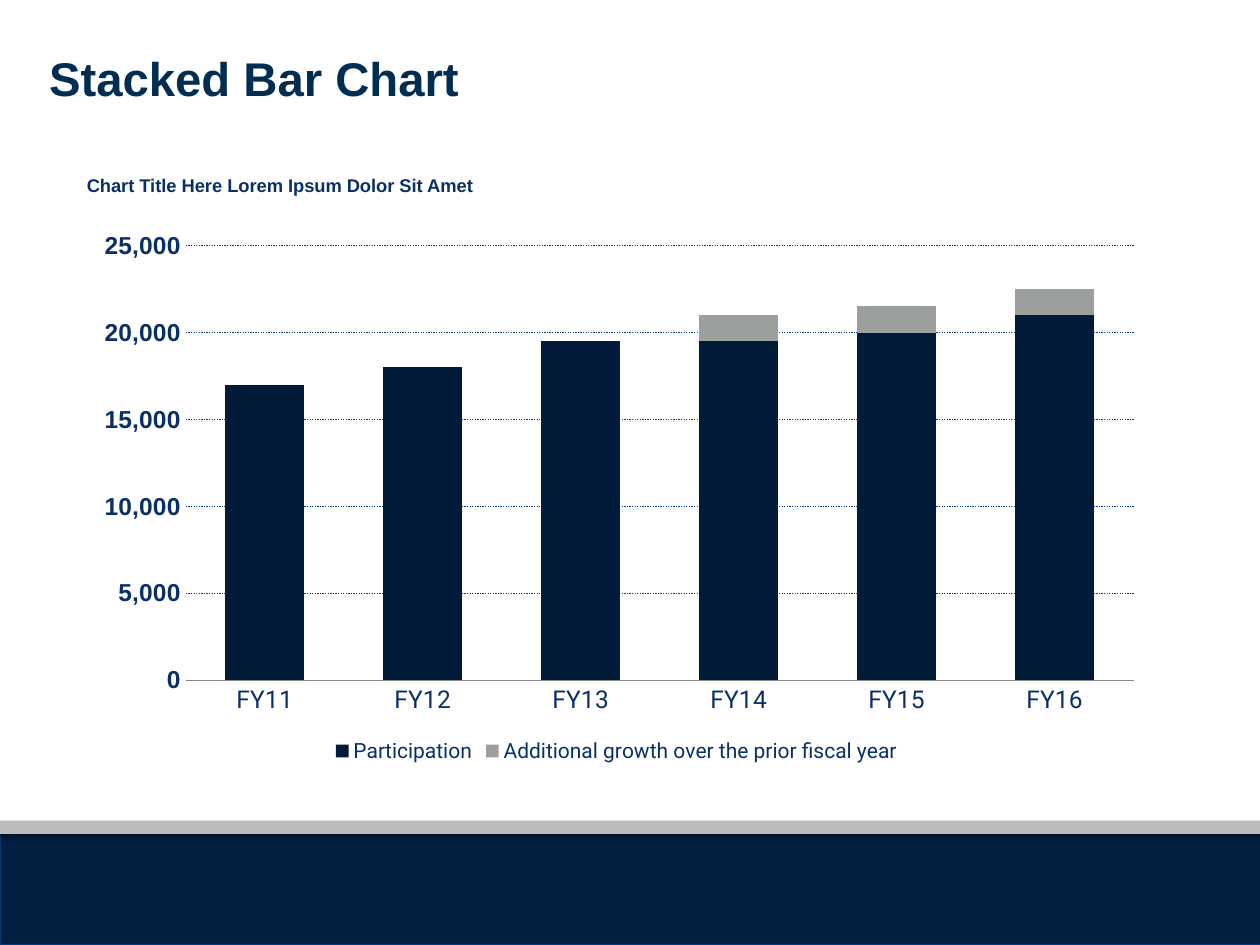
from lxml import etree
from pptx import Presentation
from pptx.chart.data import CategoryChartData
from pptx.dml.color import RGBColor
from pptx.enum import chart as ch, dml, shapes, text
from pptx.oxml import parse_xml
from pptx.oxml.ns import nsdecls, qn
from pptx.util import Pt

NAVY = RGBColor(0x04, 0x1E, 0x42)
EDGE = RGBColor(0x00, 0x3A, 0x79)
SILVER = RGBColor(0xBB, 0xBC, 0xBC)
HEAD = RGBColor(0x00, 0x2D, 0x50)
INK = RGBColor(0x0B, 0x30, 0x66)
GRID = RGBColor(0x00, 0x3D, 0x81)
AXIS = RGBColor(0x86, 0x86, 0x86)
BASE = RGBColor(0x01, 0x1B, 0x39)
EXTRA = RGBColor(0x9C, 0xA0, 0x9C)

YEARS = [f"FY{n}" for n in range(11, 17)]
SERIES = [
    ("Participation", [17000, 18000, 19500, 19500, 20000, 21000], BASE),
    ("Additional growth over the prior fiscal year", [None] * 3 + [1500] * 3, EXTRA),
]
PLOT = {"x": 0.1, "y": 0.05, "w": 0.88, "h": 0.79}


def style(font, size, color, name="Arial", bold=False):
    """Set the face, size, weight and colour of a font."""
    font.name, font.size, font.bold = name, Pt(size), bold
    font.color.rgb = color


def place(shape, box):
    """Move a shape to a box given in points."""
    shape.left, shape.top, shape.width, shape.height = map(Pt, box)


def write(shape, words, size, color):
    """Write one bold line at the top left of a shape."""
    frame = shape.text_frame
    frame.word_wrap = True
    frame.vertical_anchor = text.MSO_ANCHOR.TOP
    para = frame.paragraphs[0]
    para.alignment = text.PP_ALIGN.LEFT
    run = para.add_run()
    run.text = words
    style(run.font, size, color, bold=True)


def band(slide, box, fill, line=None):
    """Draw a filled band with a soft shadow below."""
    bar = slide.shapes.add_shape(shapes.MSO_SHAPE.RECTANGLE, *map(Pt, box))
    bar.fill.solid()
    bar.fill.fore_color.rgb = fill
    if line:
        bar.line.color.rgb = line
        bar.line.width = Pt(0.75)
    else:
        bar.line.fill.background()
    bar.shadow.inherit = False
    glow = bar._element.spPr.find(qn("a:effectLst"))
    glow.append(parse_xml(
        f'<a:outerShdw {nsdecls("a")} blurRad="{Pt(3.1)}" dist="{Pt(1.8)}" '
        'dir="5400000" rotWithShape="0"><a:srgbClr val="000000">'
        '<a:alpha val="35000"/></a:srgbClr></a:outerShdw>'))


def footer(slide, box):
    """Draw the navy footer and the silver strip along its top."""
    left, top, width, height = box
    strip = 7.5
    band(slide, (left, top + strip, width + 1.4, height - strip), NAVY, EDGE)
    band(slide, (left, top, width, strip), SILVER)


def fix(plot):
    """Pin the inner plot area to fractions of the chart."""
    area = plot._element.getparent()
    old = area.find(qn("c:layout"))
    if old is not None:
        area.remove(old)
    layout = etree.Element(qn("c:layout"))
    manual = etree.SubElement(layout, qn("c:manualLayout"))
    parts = [("layoutTarget", "inner"), ("xMode", "edge"), ("yMode", "edge")]
    for tag, val in parts + list(PLOT.items()):
        etree.SubElement(manual, qn("c:" + tag)).set("val", str(val))
    area.insert(0, layout)


def axes(chart):
    """Format both axes and the dotted grid."""
    years, values = chart.category_axis, chart.value_axis
    for axis in (years, values):
        axis.major_tick_mark = axis.minor_tick_mark = ch.XL_TICK_MARK.NONE
    style(years.tick_labels.font, 14, INK, "Roboto")
    style(values.tick_labels.font, 14, INK, bold=True)
    years.format.line.color.rgb = AXIS
    values.format.line.fill.background()
    values.minimum_scale, values.maximum_scale, values.major_unit = 0, 25000, 5000
    values.tick_labels.number_format = "#,##0"
    values.tick_labels.number_format_is_linked = False
    grid = values.major_gridlines.format.line
    grid.color.rgb = GRID
    grid.width = Pt(0.75)
    grid.dash_style = dml.MSO_LINE.ROUND_DOT


def columns(slide, box):
    """Add the stacked column chart with its legend."""
    data = CategoryChartData(number_format="#,##0")
    data.categories = YEARS
    for name, vals, _ in SERIES:
        data.add_series(name, vals)
    chart = slide.shapes.add_chart(
        ch.XL_CHART_TYPE.COLUMN_STACKED, *map(Pt, box), data).chart
    style(chart.font, 18, RGBColor(0, 0, 0), "Calibri")
    chart.has_title = False
    plot = chart.plots[0]
    plot.gap_width, plot.overlap, plot.vary_by_categories = 100, 100, False
    for series, (_, _, color) in zip(plot.series, SERIES):
        series.format.fill.solid()
        series.format.fill.fore_color.rgb = color
    axes(chart)
    fix(plot)
    chart.has_legend = True
    chart.legend.position = ch.XL_LEGEND_POSITION.BOTTOM
    chart.legend.include_in_layout = False
    style(chart.legend.font, 12, INK, "Roboto")


def main():
    """Build the slide and save it."""
    deck = Presentation()
    deck.slide_width, deck.slide_height = Pt(720), Pt(540)
    slide = deck.slides.add_slide(deck.slide_layouts[5])
    footer(slide, (0, 469, 720, 71))
    columns(slide, (44.6, 124.6, 615.6, 314.6))
    label = slide.shapes.add_textbox(*map(Pt, (42.5, 95.8, 425.5, 20)))
    write(label, "Chart Title Here Lorem Ipsum Dolor Sit Amet", 10.5, INK)
    place(slide.shapes.title, (20.9, 24.5, 648, 62.6))
    write(slide.shapes.title, "Stacked Bar Chart", 27, HEAD)
    deck.save("out.pptx")


if __name__ == "__main__":
    main()
